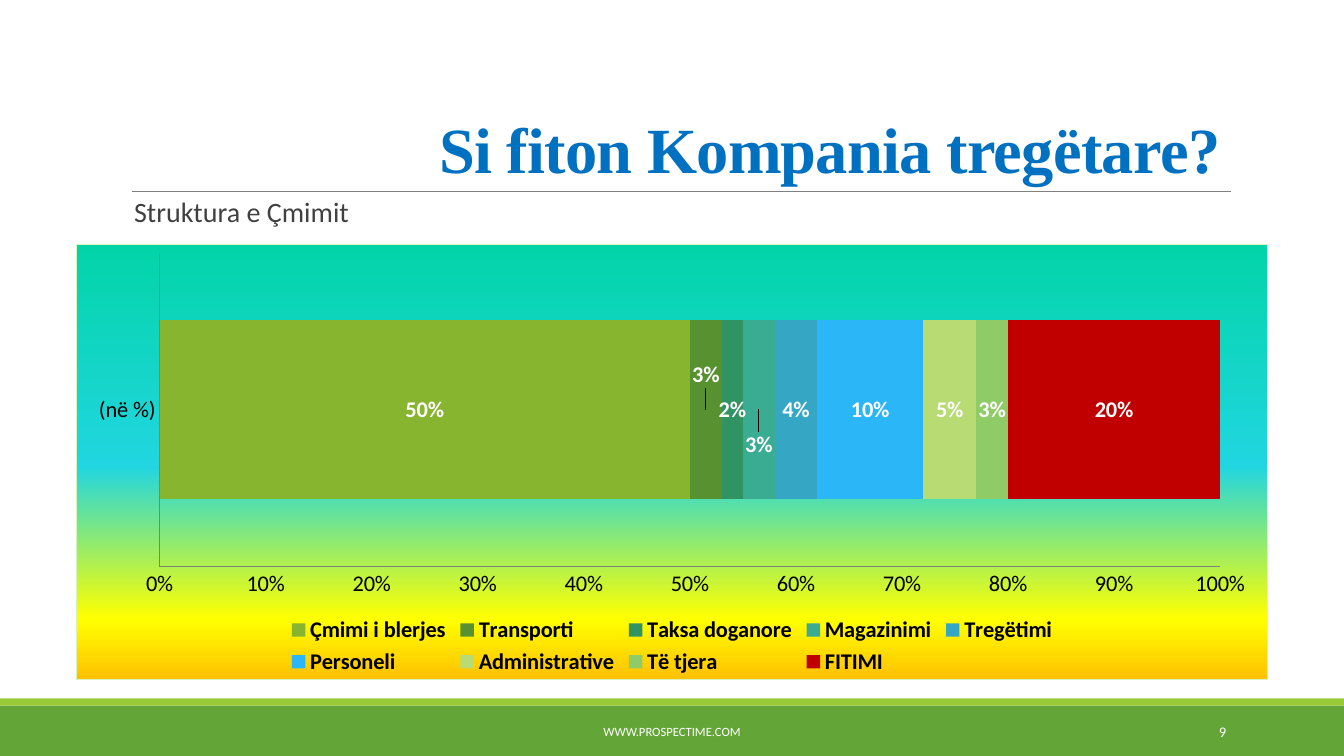
from lxml.etree import SubElement
from pptx import Presentation
from pptx.chart.data import CategoryChartData
from pptx.dml.color import RGBColor
from pptx.enum.chart import (XL_CHART_TYPE, XL_LABEL_POSITION,
                             XL_LEGEND_POSITION, XL_TICK_MARK)
from pptx.enum.shapes import MSO_CONNECTOR, MSO_SHAPE
from pptx.enum.text import MSO_ANCHOR, PP_ALIGN
from pptx.oxml import parse_xml
from pptx.oxml.ns import nsdecls, qn
from pptx.util import Inches, Pt

GREEN = RGBColor(0x63, 0xA5, 0x37)
LIME = RGBColor(0x99, 0xCB, 0x38)
JADE = RGBColor(0x37, 0xA7, 0x6F)
TEAL = RGBColor(0x44, 0xC1, 0xA3)
STEEL = RGBColor(0x4E, 0xB3, 0xCF)
SKY = RGBColor(0x51, 0xC3, 0xF9)
RED = RGBColor(0xC0, 0x00, 0x00)
BLUE = RGBColor(0x00, 0x70, 0xC0)
GRAY = RGBColor(0x80, 0x80, 0x80)
DARK = RGBColor(0x40, 0x40, 0x40)
BLACK = RGBColor(0x00, 0x00, 0x00)
WHITE = RGBColor(0xFF, 0xFF, 0xFF)

AREA_STOPS = [(0, "03D4A8"), (51, "21D6E0"), (86, "FFFF00"), (100, "FFC000")]
AREA_BORDER = "DAF4BD"

COSTS = [
    ("Çmimi i blerjes", 0.5, LIME, -0.12, 0),
    ("Transporti", 0.03, GREEN, -0.12, -0.08),
    ("Taksa doganore", 0.02, JADE, -0.12, 0),
    ("Magazinimi", 0.03, TEAL, -0.12, 0.08),
    ("Tregëtimi", 0.04, STEEL, -0.12, 0),
    ("Personeli", 0.1, SKY, -0.12, 0),
    ("Administrative", 0.05, LIME, 0.3, 0),
    ("Të tjera", 0.03, GREEN, 0.3, 0),
    ("FITIMI", 0.2, RED, 0, 0),
]


def place(sp, x, y, w, h):
    """Move a shape to the given box in inches."""
    sp.left, sp.top, sp.width, sp.height = map(Inches, (x, y, w, h))


def style(font, size, color, bold=False, name="Calibri"):
    """Set size, colour, weight and face of a font."""
    font.size, font.bold, font.name = Pt(size), bold, name
    font.color.rgb = color


def add_heading(s, x, y, w, h):
    """Fill the title and draw the rule under it."""
    sp = s.shapes.title
    place(sp, x, y, w, h)
    tf = sp.text_frame
    tf.text = "Si fiton Kompania tregëtare?"
    tf.word_wrap = True
    tf.vertical_anchor = MSO_ANCHOR.BOTTOM
    p = tf.paragraphs[0]
    p.alignment, p.line_spacing = PP_ALIGN.RIGHT, 0.85
    r = p.runs[0]
    style(r.font, 46, BLUE, True, "Times New Roman")
    r.font._element.set("spc", "-50")
    rule = s.shapes.add_connector(
        MSO_CONNECTOR.STRAIGHT, Inches(x + 0.11), Inches(y + h),
        Inches(x + w + 0.01), Inches(y + h))
    rule.line.color.rgb, rule.line.width = GRAY, Pt(0.5)
    SubElement(rule._element.spPr, qn("a:effectLst"))


def add_subtitle(s, x, y, w, h):
    """Fill the body placeholder with the subtitle."""
    sp = s.placeholders[1]
    place(sp, x, y, w, h)
    tf = sp.text_frame
    tf.text = "Struktura e Çmimit"
    tf.margin_left = tf.margin_right = 0
    tf.vertical_anchor = MSO_ANCHOR.TOP
    p = tf.paragraphs[0]
    pPr = p._p.get_or_add_pPr()
    pPr.set("marL", "0")
    pPr.set("indent", "0")
    SubElement(pPr, qn("a:buNone"))
    p.line_spacing, p.space_before, p.space_after = 0.9, Pt(0), Pt(2)
    style(p.runs[0].font, 20, DARK)


def add_layout(parent, index, **sizes):
    """Insert a manual layout into a chart part."""
    items = "".join(f'<c:{k} val="{v}"/>' for k, v in sizes.items())
    parent.insert(index, parse_xml(
        f'<c:layout {nsdecls("c")}><c:manualLayout>{items}'
        '</c:manualLayout></c:layout>'))


def paint_area(chart):
    """Give the chart area its gradient and border."""
    stops = "".join(
        f'<a:gs pos="{pos * 1000}"><a:srgbClr val="{color}"/></a:gs>'
        for pos, color in AREA_STOPS)
    chart._chartSpace.find(qn("c:chart")).addnext(parse_xml(
        f'<c:spPr {nsdecls("c", "a")}><a:gradFill><a:gsLst>{stops}</a:gsLst>'
        '<a:lin ang="5400000" scaled="0"/></a:gradFill><a:ln w="9525">'
        f'<a:solidFill><a:srgbClr val="{AREA_BORDER}"/></a:solidFill>'
        '</a:ln></c:spPr>'))


def style_series(ser, color, brightness, shift):
    """Colour a series and place its value label."""
    fill = ser.format.fill
    fill.solid()
    fill.fore_color.rgb = color
    fill.fore_color.brightness = brightness
    labels = ser.data_labels
    labels.show_value = True
    labels.number_format, labels.number_format_is_linked = "0%", False
    labels.position = XL_LABEL_POSITION.CENTER
    style(labels.font, 16, WHITE, True)
    if shift:
        label = ser.points[0].data_label
        label.position = XL_LABEL_POSITION.CENTER
        style(label.font, 16, WHITE, True)
        dLbl = labels._element.find(qn("c:dLbl"))
        add_layout(dLbl, 1, x=0, y=shift)
        dLbl.insert(2, parse_xml(
            f'<c:numFmt {nsdecls("c")} formatCode="0%" sourceLinked="0"/>'))


def add_price_chart(s, x, y, w, h):
    """Draw the price structure as one stacked bar."""
    data = CategoryChartData(number_format="0%")
    data.categories = ["(në %)"]
    for name, value, *_ in COSTS:
        data.add_series(name, [value])
    chart = s.shapes.add_chart(
        XL_CHART_TYPE.BAR_STACKED_100, Inches(x), Inches(y), Inches(w),
        Inches(h), data).chart
    style(chart.font, 16, BLACK)
    chart.has_title = False
    paint_area(chart)
    plot = chart.plots[0]
    plot.gap_width, plot.overlap = 75, 100
    plot.vary_by_categories = False
    for ser, (_, _, *look) in zip(plot.series, COSTS):
        style_series(ser, *look)
    for axis in (chart.category_axis, chart.value_axis):
        axis.has_major_gridlines = False
        axis.major_tick_mark = axis.minor_tick_mark = XL_TICK_MARK.NONE
        axis.format.line.color.rgb = GRAY
        axis.format.line.width = Pt(1)
    ticks = chart.value_axis.tick_labels
    ticks.number_format, ticks.number_format_is_linked = "0%", False
    chart.value_axis.maximum_scale = 1
    chart.value_axis.major_unit = 0.1
    chart.has_legend = True
    chart.legend.position = XL_LEGEND_POSITION.BOTTOM
    chart.legend.include_in_layout = False
    style(chart.legend.font, 16, BLACK, True)
    area = chart._chartSpace.find(".//" + qn("c:plotArea"))
    for old in area.findall(qn("c:layout")):
        area.remove(old)
    add_layout(area, 0, layoutTarget="inner", xMode="edge", yMode="edge",
               x=0.07, y=0.02, w=0.89, h=0.72)


def add_footer(s, x, y, w, h):
    """Draw the two bands with the address and the page number."""
    for top, height, color in ((y + 0.07, h - 0.07, GREEN), (y, 0.07, LIME)):
        sp = s.shapes.add_shape(MSO_SHAPE.RECTANGLE, Inches(x), Inches(top),
                                Inches(w), Inches(height))
        sp.shadow.inherit = False
        sp.fill.solid()
        sp.fill.fore_color.rgb = color
        sp.line.fill.background()
    for left, width, text, size, align in (
            (4.03, 5.27, "WWW.PROSPECTIME.COM", 9, PP_ALIGN.CENTER),
            (10.83, 1.43, "9", 10.5, PP_ALIGN.RIGHT)):
        tf = s.shapes.add_textbox(Inches(x + left), Inches(y + 0.13),
                                  Inches(width), Inches(0.4)).text_frame
        tf.text = text
        tf.word_wrap = True
        tf.vertical_anchor = MSO_ANCHOR.MIDDLE
        p = tf.paragraphs[0]
        p.alignment = align
        style(p.runs[0].font, size, WHITE)


def main():
    """Build and save the slide."""
    prs = Presentation()
    prs.slide_width, prs.slide_height = Inches(13.33), Inches(7.5)
    s = prs.slides.add_slide(prs.slide_layouts[1])
    add_footer(s, 0, 6.93, 13.33, 0.57)
    add_heading(s, 1.2, 0.31, 11, 1.59)
    add_subtitle(s, 1.33, 1.92, 7.5, 0.67)
    add_price_chart(s, 0.75, 2.42, 11.83, 4.33)
    prs.save("out.pptx")


if __name__ == "__main__":
    main()
